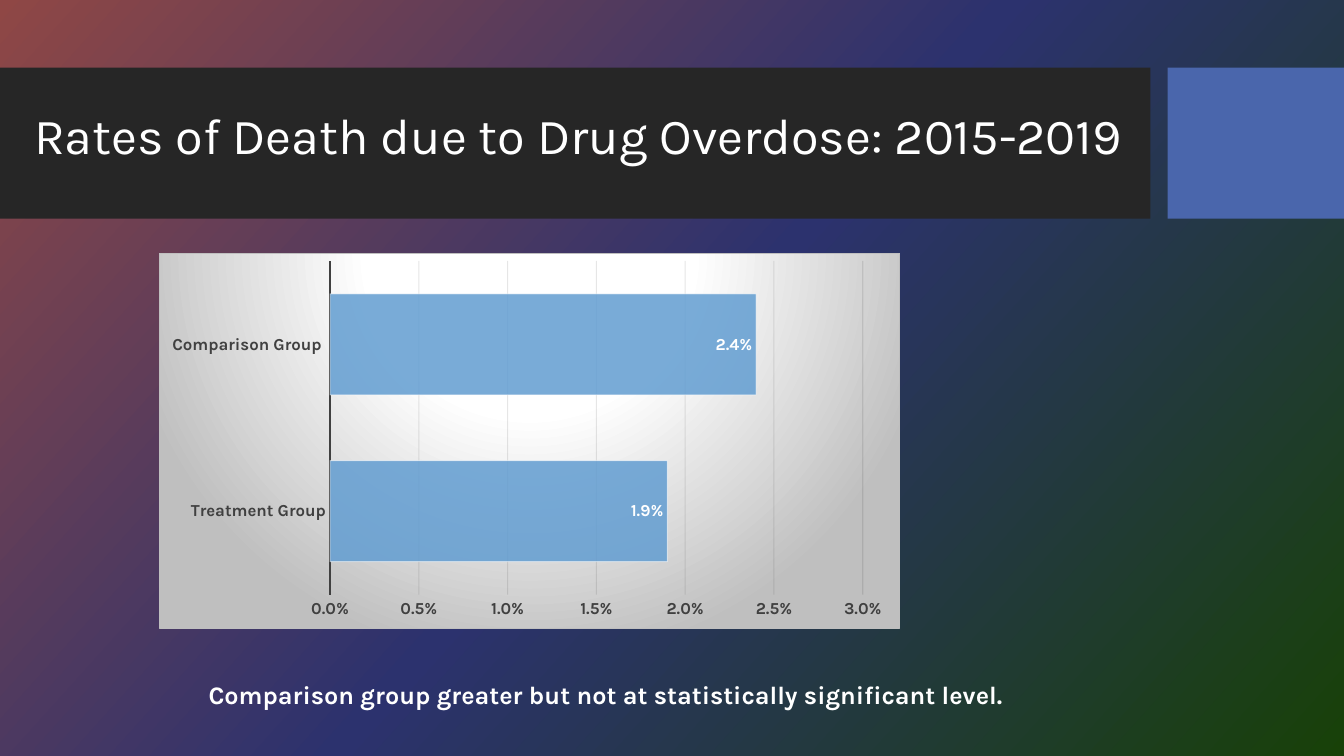
import pptx
import pptx.chart.data
import pptx.dml.color
import pptx.enum.chart
import pptx.enum.shapes
import pptx.enum.text
import pptx.oxml
import pptx.oxml.ns
import pptx.util
from lxml import etree

Inches = pptx.util.Inches
Pt = pptx.util.Pt
RGBColor = pptx.dml.color.RGBColor
qn = pptx.oxml.ns.qn

FONT = "Karla"
WHITE = RGBColor(0xFF, 0xFF, 0xFF)
BLACK = RGBColor(0x0D, 0x0D, 0x0D)
CHARCOAL = RGBColor(0x26, 0x26, 0x26)
GRAY = RGBColor(0x40, 0x40, 0x40)
SILVER = RGBColor(0xBF, 0xBF, 0xBF)
ACCENT = RGBColor(0x4A, 0x66, 0xAC)
BAR_BLUE = RGBColor(0x62, 0x9D, 0xD1)
RED = RGBColor(0x8F, 0x47, 0x45)
NAVY = RGBColor(0x2C, 0x32, 0x6E)
GREEN = RGBColor(0x18, 0x41, 0x08)


def set_stops(gradient, stops):
    stop_list = gradient.find(qn("a:gsLst"))
    for stop in list(stop_list):
        stop_list.remove(stop)
    for position, color in stops:
        stop = etree.SubElement(stop_list, qn("a:gs"), pos=str(position * 1000))
        etree.SubElement(stop, qn("a:srgbClr"), val=str(color))


def set_alpha(element, percent):
    for color in element.iter(qn("a:srgbClr")):
        etree.SubElement(color, qn("a:alpha"), val=str(percent * 1000))


def set_line(line, color, width):
    line.color.rgb = color
    line.width = Pt(width)


def set_font(font, size, color, bold=False):
    font.name = FONT
    font.size = Pt(size)
    font.bold = bold
    font.color.rgb = color


def paint_background(slide):
    fill = slide.background.fill
    fill.gradient()
    fill.gradient_angle = 318
    gradient = slide.element.find(".//" + qn("a:gradFill"))
    set_stops(gradient, [(0, RED), (50, NAVY), (100, GREEN)])


def add_block(slide, left, width, color):
    shape = slide.shapes.add_shape(
        pptx.enum.shapes.MSO_SHAPE.RECTANGLE,
        Inches(left), Inches(0.67), Inches(width), Inches(1.5))
    shape.shadow.inherit = False
    shape.fill.solid()
    shape.fill.fore_color.rgb = color
    shape.line.fill.background()


def add_text(slide, text, left, top, width, height, size, bold=False,
             anchor=pptx.enum.text.MSO_ANCHOR.TOP, line_spacing=None):
    box = slide.shapes.add_textbox(
        Inches(left), Inches(top), Inches(width), Inches(height))
    frame = box.text_frame
    frame.word_wrap = True
    frame.vertical_anchor = anchor
    paragraph = frame.paragraphs[0]
    paragraph.line_spacing = line_spacing
    run = paragraph.add_run()
    run.text = text
    set_font(run.font, size, WHITE, bold)


def style_chart_area(chart):
    properties = pptx.oxml.parse_xml(
        f'<c:spPr {pptx.oxml.ns.nsdecls("c", "a")}>'
        '<a:gradFill><a:gsLst/><a:path path="circle">'
        '<a:fillToRect l="50000" t="-80000" r="50000" b="180000"/>'
        '</a:path></a:gradFill>'
        f'<a:ln w="9525"><a:solidFill><a:srgbClr val="{SILVER}"/></a:solidFill></a:ln>'
        '</c:spPr>')
    set_stops(properties.find(qn("a:gradFill")), [(0, WHITE), (39, WHITE), (100, SILVER)])
    chart.element.find(qn("c:chart")).addnext(properties)


def place_plot_area(chart, **fractions):
    plot_area = chart.element.find(".//" + qn("c:plotArea"))
    for old_layout in plot_area.findall(qn("c:layout")):
        plot_area.remove(old_layout)
    layout = etree.Element(qn("c:layout"))
    manual = etree.SubElement(layout, qn("c:manualLayout"))
    settings = {"layoutTarget": "inner", "xMode": "edge", "yMode": "edge", **fractions}
    for name, value in settings.items():
        etree.SubElement(manual, qn("c:" + name), val=str(value))
    plot_area.insert(0, layout)


def style_axes(chart):
    category_axis, value_axis = chart.category_axis, chart.value_axis
    for axis in (category_axis, value_axis):
        axis.major_tick_mark = pptx.enum.chart.XL_TICK_MARK.NONE
        axis.minor_tick_mark = pptx.enum.chart.XL_TICK_MARK.NONE
        set_font(axis.tick_labels.font, 12, GRAY, True)
    set_line(category_axis.format.line, GRAY, 1.5)
    value_axis.format.line.fill.background()
    value_axis.minimum_scale = 0
    value_axis.maximum_scale = 0.03
    value_axis.major_unit = 0.005
    value_axis.tick_labels.number_format = "0.0%"
    value_axis.tick_labels.number_format_is_linked = False
    value_axis.has_major_gridlines = True
    set_line(value_axis.major_gridlines.format.line, BLACK, 0.75)
    set_alpha(chart.element.find(".//" + qn("c:majorGridlines")), 10)


def style_bars(chart):
    plot = chart.plots[0]
    plot.gap_width = 65
    plot.vary_by_categories = False
    series = plot.series[0]
    series.format.fill.solid()
    series.format.fill.fore_color.rgb = BAR_BLUE
    set_line(series.format.line, WHITE, 0.75)
    bar_properties = chart.element.find(".//" + qn("c:ser")).find(qn("c:spPr"))
    set_alpha(bar_properties.find(qn("a:solidFill")), 85)
    set_alpha(bar_properties.find(qn("a:ln")), 50)
    labels = series.data_labels
    labels.show_value = True
    labels.number_format = "0.0%"
    labels.number_format_is_linked = False
    labels.position = pptx.enum.chart.XL_LABEL_POSITION.INSIDE_END
    set_font(labels.font, 12, WHITE, True)


def add_rate_chart(slide):
    data = pptx.chart.data.CategoryChartData(number_format="0.0%")
    data.categories = ["Treatment Group", "Comparison Group "]
    data.add_series("Series 1", [0.019, 0.024])
    chart = slide.shapes.add_chart(
        pptx.enum.chart.XL_CHART_TYPE.BAR_CLUSTERED,
        Inches(1.58), Inches(2.51), Inches(7.35), Inches(3.73), data).chart
    chart.has_title = False
    chart.has_legend = False
    set_font(chart.font, 10, WHITE)
    style_chart_area(chart)
    place_plot_area(chart, x=0.23, y=0.02, w=0.72, h=0.89)
    style_axes(chart)
    style_bars(chart)


def main():
    presentation = pptx.Presentation()
    presentation.slide_width = Inches(13.33)
    presentation.slide_height = Inches(7.5)
    slide = presentation.slides.add_slide(presentation.slide_layouts[6])
    paint_background(slide)
    add_block(slide, 0, 11.41, CHARCOAL)
    add_block(slide, 11.58, 1.75, ACCENT)
    add_text(slide, "Rates of Death due to Drug Overdose: 2015-2019",
             0.24, 0.78, 11.73, 1.18, 36,
             anchor=pptx.enum.text.MSO_ANCHOR.MIDDLE, line_spacing=0.9)
    add_rate_chart(slide)
    add_text(slide, "Comparison group greater but not at statistically significant level.",
             1.97, 6.69, 9.5, 0.4, 18, bold=True)
    presentation.save("out.pptx")


if __name__ == "__main__":
    main()
